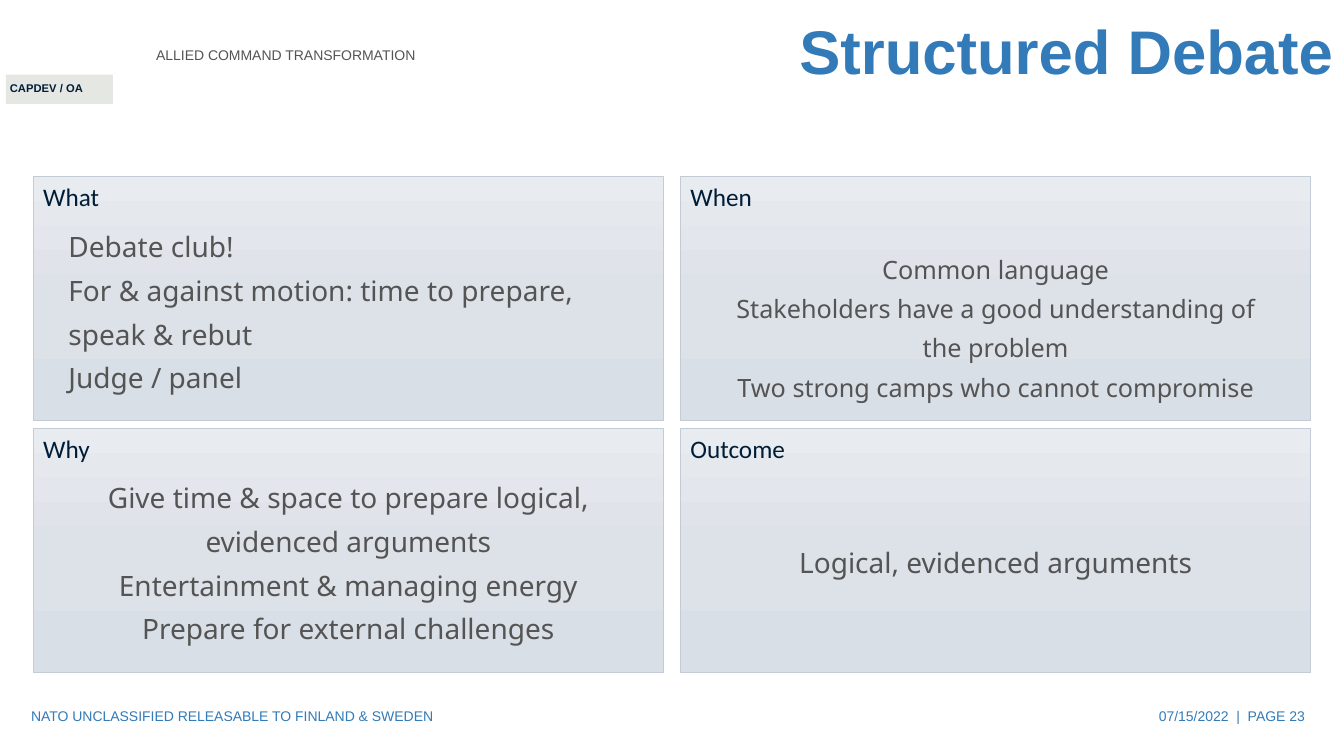
from copy import deepcopy
from dataclasses import dataclass

from pptx import Presentation
from pptx.dml.color import RGBColor
from pptx.enum.shapes import MSO_SHAPE as Shape
from pptx.enum.text import MSO_ANCHOR as Anchor, MSO_AUTO_SIZE as Auto, PP_ALIGN as Align
from pptx.oxml.ns import qn
from pptx.util import Inches, Pt


@dataclass(frozen=True)
class Theme:
    blue: str = "327BB8"
    navy: str = "001D38"
    grey: str = "545454"
    tag: str = "E5E7E3"
    edge: str = "C3CCD6"
    fade: tuple = ("E8EBEF", "DDE2E8", "D9DFE6")
    sans: str = "Arial"
    head: str = "Calibri"
    body: str = "Noto Sans"
    huge: int = 44
    large: int = 20
    mid: int = 18
    small: int = 10
    tiny: int = 8


THEME = Theme()

# heading, lines, text size, alignment, top within panel, height
PANELS = [
    ("What", ["Debate club!",
              "For & against motion: time to prepare, speak & rebut",
              "Judge / panel"], THEME.large, Align.LEFT, 0.37, 1.85),
    ("When", ["Common language",
              "Stakeholders have a good understanding of the problem",
              "Two strong camps who cannot compromise"],
     THEME.mid, Align.CENTER, 0.62, 1.68),
    ("Why", ["Give time & space to prepare logical, evidenced arguments",
             "Entertainment & managing energy",
             "Prepare for external challenges"],
     THEME.large, Align.CENTER, 0.36, 1.85),
    ("Outcome", ["Logical, evidenced arguments"],
     THEME.large, Align.CENTER, 1.03, 0.5),
]


def inches(box):
    return [Inches(side) for side in box]


def write(shape, lines, font=THEME.sans, size=THEME.small, color=THEME.grey,
          bold=False, align=Align.LEFT, anchor=Anchor.MIDDLE, space=1.0,
          wrap=True, grow=False):
    frame = shape.text_frame
    frame.text = "\n".join(lines)
    frame.word_wrap = wrap
    frame.auto_size = Auto.SHAPE_TO_FIT_TEXT if grow else Auto.NONE
    frame.vertical_anchor = anchor
    for para in frame.paragraphs:
        para.alignment = align
        para.line_spacing = space
        para.font.name = font
        para.font.size = Pt(size)
        para.font.bold = bold
        para.font.color.rgb = RGBColor.from_string(color)


def label(slide, box, lines, **style):
    write(slide.shapes.add_textbox(*inches(box)), lines, **style)


def block(slide, box):
    shape = slide.shapes.add_shape(Shape.RECTANGLE, *inches(box))
    shape.shadow.inherit = False
    return shape


def shade(shape):
    """Fill the shape with the three theme stops, top to bottom."""
    fill = shape.fill
    fill.gradient()
    fill.gradient_angle = 270
    stops = next(shape.element.iter(qn("a:gsLst")))
    stops.insert(1, deepcopy(stops[0]))
    for stop, color, pos in zip(fill.gradient_stops, THEME.fade, (0, 0.5, 1)):
        stop.color.rgb = RGBColor.from_string(color)
        stop.position = pos


def header(slide, box):
    left, top, width, height = box
    label(slide, (left + 1.45, top + 0.25, 5.91, 0.59),
          ["ALLIED COMMAND TRANSFORMATION"])
    tag = block(slide, (left + 0.06, top + 0.74, 1.06, 0.29))
    tag.fill.solid()
    tag.fill.fore_color.rgb = RGBColor.from_string(THEME.tag)
    tag.line.fill.background()
    label(slide, (left, top + 0.76, 0.93, 0.24), ["CAPDEV / OA"],
          size=THEME.tiny, color=THEME.navy, bold=True, wrap=False,
          anchor=Anchor.TOP, grow=True)
    title = slide.shapes.title
    title.left, title.top, title.width, title.height = inches(
        (left + 1.83, top, width - 1.83, height))
    write(title, ["Structured Debate"], size=THEME.huge, color=THEME.blue,
          bold=True, align=Align.RIGHT, space=0.9)


def panel(slide, box, head, lines, size, align, drop, tall):
    left, top, width, height = box
    card = block(slide, box)
    shade(card)
    card.line.color.rgb = RGBColor.from_string(THEME.edge)
    card.line.width = Pt(0.5)
    write(card, [head], font=THEME.head, size=THEME.mid, color=THEME.navy,
          anchor=Anchor.TOP)
    label(slide, (left + 0.25, top + drop, width - 0.5, tall), lines,
          font=THEME.body, size=size, align=align, space=1.3, grow=True)


def grid(slide, box):
    left, top, width, height = box
    wide, high = 6.25, 2.42
    for i, part in enumerate(PANELS):
        row, col = divmod(i, 2)
        place = (left + col * (width - wide), top + row * (height - high),
                 wide, high)
        panel(slide, place, *part)


def footer(slide, box):
    left, top, width, height = box
    label(slide, (left, top, 4.5, height),
          ["NATO UNCLASSIFIED RELEASABLE TO FINLAND & SWEDEN"],
          color=THEME.blue)
    label(slide, (left + width - 3, top, 3, height),
          ["07/15/2022  |  PAGE 23"], color=THEME.blue, align=Align.RIGHT)


def main():
    deck = Presentation()
    deck.slide_width, deck.slide_height = Inches(13.33), Inches(7.5)
    slide = deck.slides.add_slide(deck.slide_layouts.get_by_name("Title Only"))
    header(slide, (0, 0, 13.33, 1.08))
    grid(slide, (0.33, 1.75, 12.67, 4.92))
    footer(slide, (0.21, 6.9, 12.83, 0.4))
    deck.save("out.pptx")


if __name__ == "__main__":
    main()
